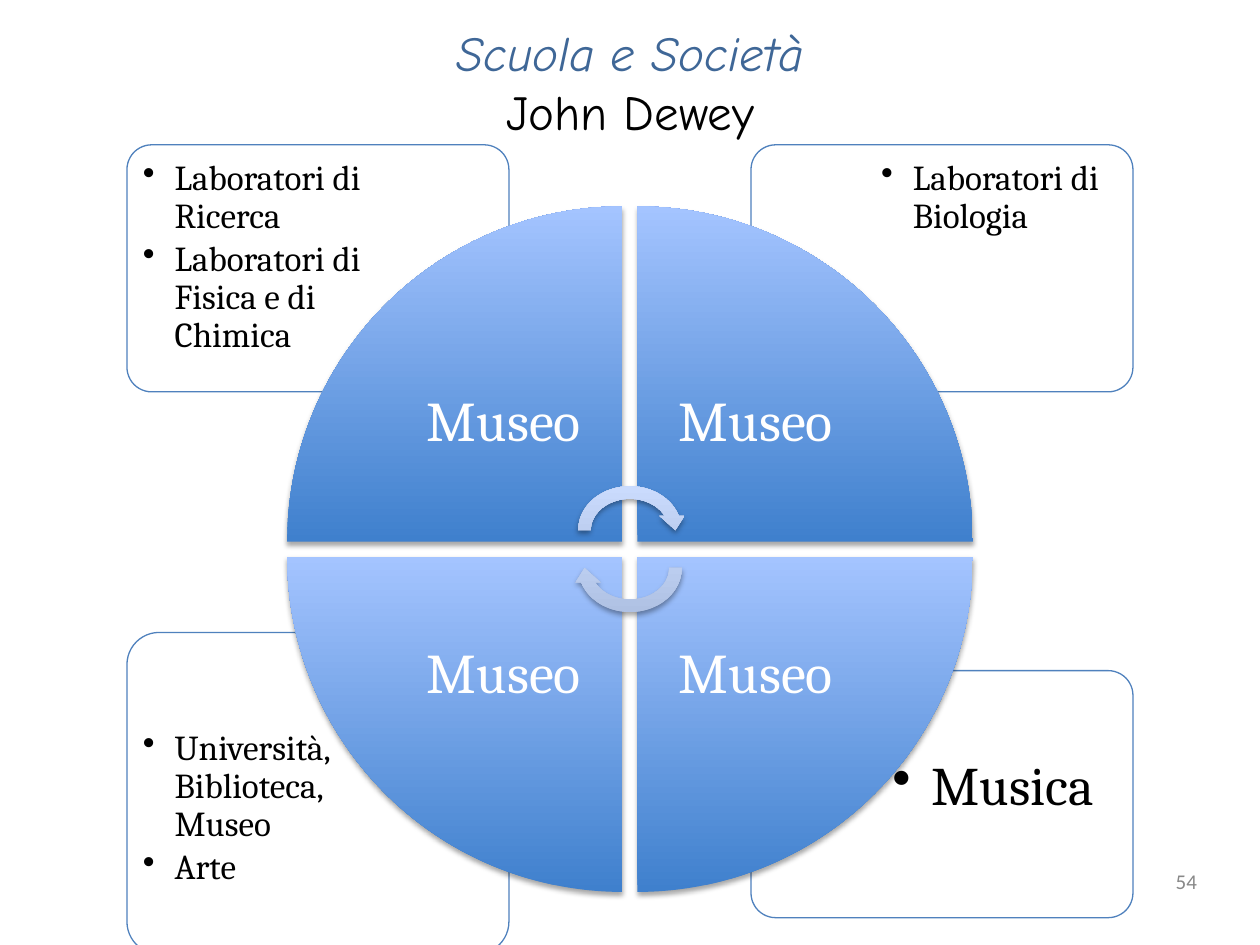
from pptx import Presentation
from pptx.dml.color import RGBColor
from pptx.enum.shapes import MSO_SHAPE
from pptx.enum.text import MSO_ANCHOR, PP_ALIGN
from pptx.oxml import parse_xml
from pptx.oxml.ns import nsdecls
from pptx.util import Cm, Pt
from dataclasses import dataclass


@dataclass(frozen=True)
class Theme:
    blue: str = "3F6797"
    black: str = "000000"
    white: str = "FFFFFF"
    edge: str = "4F81BD"
    grey: str = "888888"
    wedge: tuple = ("3F80CD", "A4C4FF")
    arrow: tuple = ("ADBFE1", "CCDDFF")
    head: str = "Comic Neue"
    body: str = "Cambria"
    foot: str = "Calibri"
    big: int = 32
    title: int = 28
    small: int = 12


T = Theme()
TITLE = [("Scuola e Società", T.blue, True), ("John Dewey", T.black, False)]
LABEL = "Museo"
PAGE = "54"
CARDS = [
    dict(side=1, row=1, top=13.52, high=4.98, size=31, inset=0.43, hang=0.79,
         items=["Musica"]),
    dict(side=-1, row=1, top=12.75, high=6.48, size=20, inset=0.2, hang=0.64,
         items=["Università, Biblioteca, Museo", "Arte"]),
    dict(side=1, row=-1, top=2.92, high=4.98, size=20, inset=0.2, hang=0.64,
         items=["Laboratori di Biologia"]),
    dict(side=-1, row=-1, top=2.92, high=4.98, size=20, inset=0.2, hang=0.64,
         items=["Laboratori di Ricerca", "Laboratori di Fisica e di Chimica"]),
]
WEDGES = [(-1, -1), (1, -1), (1, 1), (-1, 1)]
WIDE, TALL = 25.4, 19.05
MID_X, MID_Y = WIDE / 2, 11.07
GAP, WEDGE, INNER = 0.15, 6.76, 4.78
CARD_W, EDGE = 7.7, 2.56
TEXT_W, TEXT_H, PAD = 0.67, 0.707, 0.12
ARROW_W, ARROW_H, SHIFT = 2.34, 2.03, 0.38


def box(x, y, w, h):
    return Cm(x), Cm(y), Cm(w), Cm(h)


def write(para, text, size, font, color, slant=None):
    run = para.add_run()
    run.text = text
    run.font.size = Pt(size)
    run.font.name = font
    run.font.italic = slant
    run.font.color.rgb = RGBColor.from_string(color)


def frame(shape, inset, anchor):
    area = shape.text_frame
    area.word_wrap = True
    area.vertical_anchor = anchor
    area.margin_left = area.margin_right = Cm(inset)
    area.margin_top = area.margin_bottom = Cm(inset)
    return area


def bullet(para, hang):
    props = para._p.get_or_add_pPr()
    props.set("marL", str(Cm(hang)))
    props.set("indent", str(-Cm(hang)))
    props.append(parse_xml(f'<a:buChar {nsdecls("a")} char="•"/>'))


def near(side, mid, size):
    return mid + GAP if side > 0 else mid - GAP - size


def glossy(slide, kind, place, turn, colors):
    shape = slide.shapes.add_shape(kind, *place)
    shape.rotation = turn
    shape.fill.gradient()
    shape.fill.gradient_angle = 90
    for stop, color in zip(shape.fill.gradient_stops, colors):
        stop.color.rgb = RGBColor.from_string(color)
    shape.line.fill.background()
    shape.shadow.inherit = False
    props = shape._element.spPr
    props.find("{*}gradFill").set("rotWithShape", "0")
    props.find("{*}effectLst").append(parse_xml(
        f'<a:outerShdw {nsdecls("a")} blurRad="{Pt(3)}" dist="{Pt(1.8)}" '
        f'dir="5400000" rotWithShape="0"><a:srgbClr val="{T.black}">'
        '<a:alpha val="35000"/></a:srgbClr></a:outerShdw>'))


def card(slide, side, row, top, high, size, inset, hang, items):
    left = EDGE if side < 0 else WIDE - EDGE - CARD_W
    shape = slide.shapes.add_shape(
        MSO_SHAPE.ROUNDED_RECTANGLE, *box(left, top, CARD_W, high))
    shape.adjustments[0] = 0.1
    shape.shadow.inherit = False
    shape.fill.solid()
    shape.fill.fore_color.rgb = RGBColor.from_string(T.white)
    tint = shape._element.spPr.find("{*}solidFill")[0]
    tint.append(parse_xml(f'<a:alpha {nsdecls("a")} val="90000"/>'))
    shape.line.color.rgb = RGBColor.from_string(T.edge)
    shape.line.width = Pt(0.75)

    wide, deep = CARD_W * TEXT_W, high * TEXT_H
    x = left + PAD if side < 0 else left + CARD_W - PAD - wide
    y = top + PAD if row < 0 else top + high - PAD - deep
    area = frame(slide.shapes.add_textbox(*box(x, y, wide, deep)),
                 inset, MSO_ANCHOR.TOP)
    for i, item in enumerate(items):
        para = area.add_paragraph() if i else area.paragraphs[0]
        para.line_spacing = 0.9
        para.space_after = Pt(size * 0.15)
        bullet(para, hang)
        write(para, item, size, T.body, T.black)


def label(slide, place, inset, text, size, font, color, align):
    area = frame(slide.shapes.add_textbox(*place), inset, MSO_ANCHOR.MIDDLE)
    para = area.paragraphs[0]
    para.alignment = align
    para.line_spacing = 0.9
    write(para, text, size, font, color)


def main():
    deck = Presentation()
    deck.slide_width, deck.slide_height = Cm(WIDE), Cm(TALL)
    slide = deck.slides.add_slide(deck.slide_layouts[5])

    title = slide.shapes.title
    title.left, title.top, title.width, title.height = box(1.27, -1.17, 22.86, 5.61)
    para = frame(title, 0.13, MSO_ANCHOR.MIDDLE).paragraphs[0]
    para.alignment = PP_ALIGN.CENTER
    for i, (text, color, slant) in enumerate(TITLE):
        if i:
            para.add_line_break()
        write(para, text, T.title, T.head, color, slant)

    for data in CARDS:
        card(slide, **data)

    for i, (side, row) in enumerate(WEDGES):
        place = box(near(side, MID_X, WEDGE), near(row, MID_Y, WEDGE), WEDGE, WEDGE)
        glossy(slide, MSO_SHAPE.PIE_WEDGE, place, i * 90, T.wedge)
        place = box(near(side, MID_X, INNER), near(row, MID_Y, INNER), INNER, INNER)
        label(slide, place, 0.63, LABEL, T.big, T.body, T.white, PP_ALIGN.CENTER)

    for row, turn in ((-1, 0), (1, 180)):
        place = box(MID_X - ARROW_W / 2, MID_Y + row * SHIFT - ARROW_H / 2,
                    ARROW_W, ARROW_H)
        glossy(slide, MSO_SHAPE.CIRCULAR_ARROW, place, turn, T.arrow)

    label(slide, box(18.21, 17.42, 5.92, 0.74), 0, PAGE, T.small, T.foot,
          T.grey, PP_ALIGN.RIGHT)
    deck.save("out.pptx")


if __name__ == "__main__":
    main()
